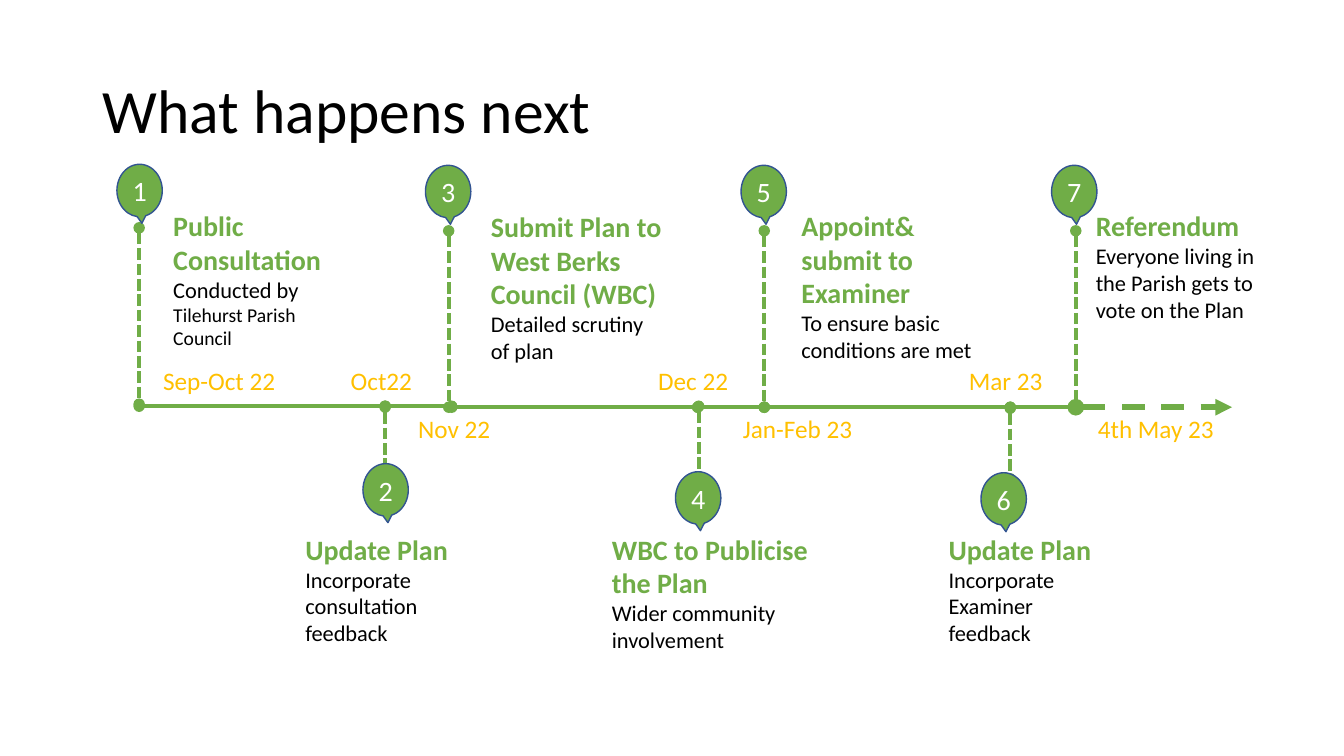
import pptx
import pptx.util
import pptx.dml.color
import pptx.enum.dml
import pptx.enum.shapes
import pptx.enum.text
import pptx.oxml
import pptx.oxml.ns

Inches = pptx.util.Inches
Pt = pptx.util.Pt
Dash = pptx.enum.dml.MSO_LINE
Anchor = pptx.enum.text.MSO_ANCHOR
Align = pptx.enum.text.PP_ALIGN


def tint(code):
    return pptx.dml.color.RGBColor.from_string(code)


class Deck:
    """Hold the timeline style and the current slide."""

    font = "Calibri"
    green, gold, edge = "70AD47", "FFC000", "325491"
    black, white = "000000", "FFFFFF"

    def __init__(self):
        self.file = pptx.Presentation()
        self.file.slide_width = Inches(13.33)
        self.file.slide_height = Inches(7.5)
        self.slide = self.file.slides.add_slide(self.file.slide_layouts[5])

    def run(self, para, text, size, color, bold=False):
        run = para.add_run()
        run.text = text
        run.font.name = self.font
        run.font.size = Pt(size)
        run.font.bold = bold
        run.font.color.rgb = tint(color)

    def title(self, text):
        box = self.slide.shapes.title
        box.left, box.top = Inches(0.92), Inches(0.4)
        box.width, box.height = Inches(11.5), Inches(1.45)
        box.text_frame.vertical_anchor = Anchor.MIDDLE
        para = box.text_frame.paragraphs[0]
        para.alignment = Align.LEFT
        para.line_spacing = 0.9
        self.run(para, text, 44, self.black)

    def text(self, left, top, width, height, lines):
        box = self.slide.shapes.add_textbox(
            Inches(left), Inches(top), Inches(width), Inches(height))
        frame = box.text_frame
        frame.word_wrap = True
        frame.auto_size = pptx.enum.text.MSO_AUTO_SIZE.SHAPE_TO_FIT_TEXT
        for i, runs in enumerate(lines):
            para = frame.add_paragraph() if i else frame.paragraphs[0]
            for run in runs:
                self.run(para, *run)

    def step(self, left, top, width, height, head, *notes):
        body = [(note, size, self.black) for note, size in notes]
        self.text(left, top, width, height, [[(head, 20, self.green, True)], body])

    def date(self, left, top, width, label):
        self.text(left, top, width, 0.4, [[(label, 18, self.gold)]])

    def line(self, x1, y1, x2, y2, dash=None, weight=2.75, tail="oval"):
        link = self.slide.shapes.add_connector(
            pptx.enum.shapes.MSO_CONNECTOR.STRAIGHT,
            Inches(x1), Inches(y1), Inches(x2), Inches(y2))
        link.line.color.rgb = tint(self.green)
        link.line.width = Pt(weight)
        if dash:
            link.line.dash_style = dash
        props = link._element.spPr
        stroke = props.find(pptx.oxml.ns.qn("a:ln"))
        space = pptx.oxml.ns.nsdecls("a")
        for tag, kind in (("headEnd", "oval"), ("tailEnd", tail)):
            stroke.append(pptx.oxml.parse_xml(f'<a:{tag} {space} type="{kind}"/>'))
        props.append(pptx.oxml.parse_xml(f"<a:effectLst {space}/>"))

    def pin(self, left, top, label):
        pin = self.slide.shapes.add_shape(
            pptx.enum.shapes.MSO_SHAPE.OVAL_CALLOUT,
            Inches(left), Inches(top), Inches(0.45), Inches(0.52))
        pin.adjustments[0], pin.adjustments[1] = 0.05, 0.625
        pin.shadow.inherit = False
        pin.fill.solid()
        pin.fill.fore_color.rgb = tint(self.green)
        pin.line.color.rgb = tint(self.edge)
        pin.line.width = Pt(1)
        frame = pin.text_frame
        frame.margin_left = frame.margin_right = 0
        frame.margin_top = frame.margin_bottom = 0
        frame.vertical_anchor = Anchor.MIDDLE
        para = frame.paragraphs[0]
        para.alignment = Align.CENTER
        self.run(para, label, 20, self.white)


def main():
    deck = Deck()
    deck.title("What happens next")

    stops = [1.38, 3.82, 4.48, 6.92, 7.58, 10.02, 10.68]
    for i, (start, end) in enumerate(zip(stops, stops[1:])):
        level = 4.03 if i < 2 else 4.04
        deck.line(start, level, end, level)

    stems = [(1.38, 2.26, 4.01), (4.45, 2.29, 4.04), (7.58, 2.29, 4.04),
             (10.67, 2.29, 4.03), (3.82, 4.04, 4.73), (6.93, 4.03, 4.73),
             (10.02, 4.05, 4.75)]
    for x, top, base in stems:
        deck.line(x, top, x, base, Dash.SQUARE_DOT)
    deck.line(10.67, 4.04, 12.22, 4.04, Dash.DASH, 4, "triangle")

    steps = [
        (1.62, 2.02, 1.9, 1.51, "Public Consultation",
         ("Conducted by ", 16), ("Tilehurst Parish Council", 14)),
        (2.93, 5.23, 1.9, 1.25, "Update Plan",
         ("Incorporate consultation feedback", 16)),
        (4.77, 2.03, 1.9, 1.65, "Submit Plan to West Berks Council (WBC)",
         ("Detailed scrutiny of plan", 16)),
        (5.97, 5.23, 2.21, 1.31, "WBC to Publicise the Plan",
         ("Wider community involvement", 16)),
        (7.85, 2.02, 1.9, 1.65, "Appoint& submit to Examiner",
         ("To ensure basic conditions are met", 16)),
        (9.31, 5.23, 1.9, 1.25, "Update Plan",
         ("Incorporate Examiner feedback", 16)),
        (10.77, 2.02, 1.9, 1.25, "Referendum",
         ("Everyone living in the Parish gets to vote on the Plan", 16)),
    ]
    for step in steps:
        deck.step(*step)

    above, below = 3.58, 4.05
    dates = [(1.52, above, 1.43, "Sep-Oct 22"), (3.38, above, 0.91, "Oct22"),
             (4.05, below, 1.04, "Nov 22"), (6.43, above, 0.91, "Dec 22"),
             (7.27, below, 1.5, "Jan-Feb 23"), (9.51, above, 1.05, "Mar 23"),
             (10.79, below, 1.68, "4th May 23")]
    for date in dates:
        deck.date(*date)

    pins = [(1.16, 1.63), (3.6, 4.6), (4.22, 1.64), (6.7, 4.68),
            (7.35, 1.64), (9.73, 4.69), (10.43, 1.64)]
    for count, (left, top) in enumerate(pins, 1):
        deck.pin(left, top, str(count))

    deck.file.save("out.pptx")


if __name__ == "__main__":
    main()
